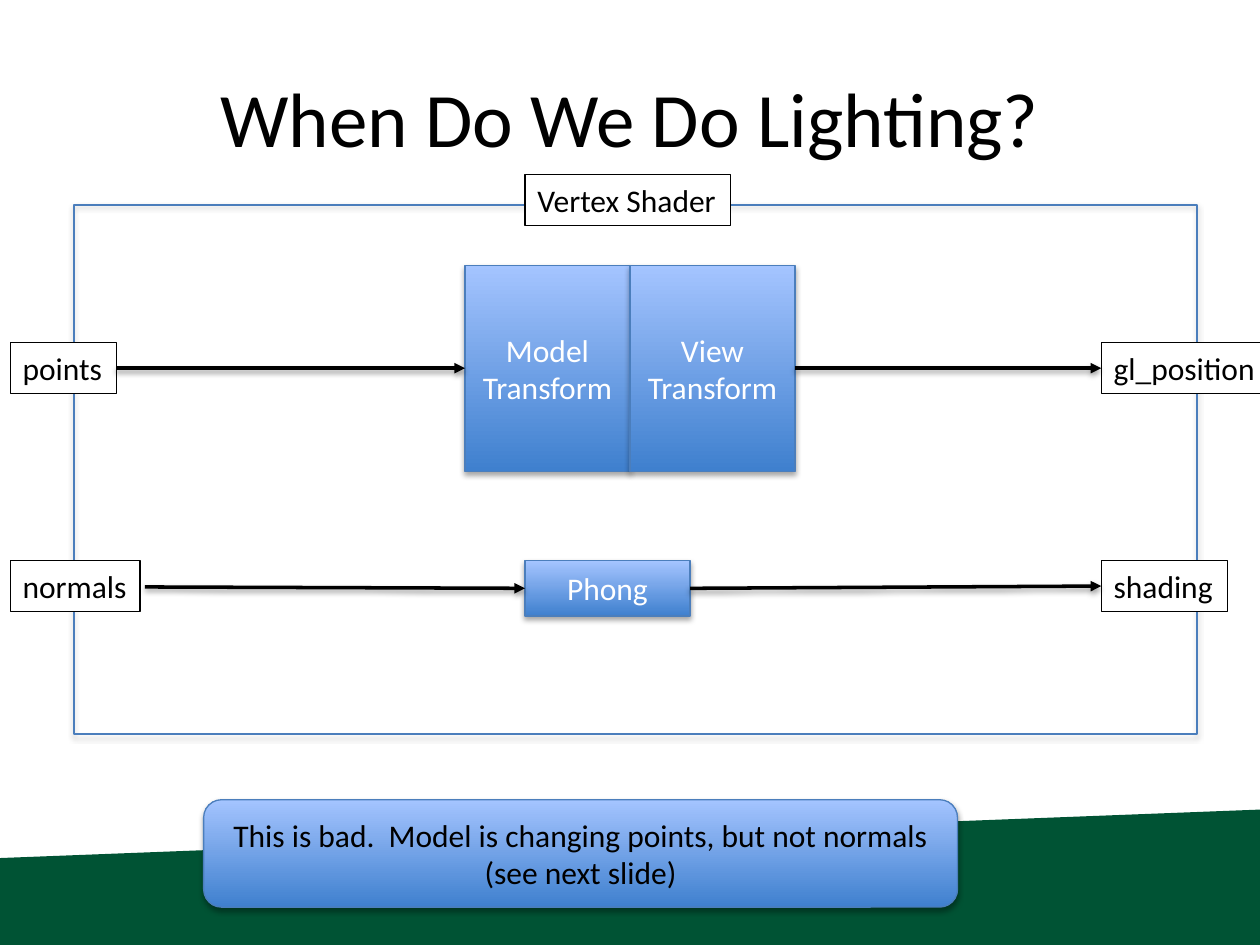
from lxml.etree import SubElement
from pptx import Presentation
from pptx.dml.color import RGBColor
from pptx.enum.shapes import MSO_CONNECTOR as Conn, MSO_SHAPE as Shape
from pptx.enum.text import MSO_ANCHOR as Anchor, MSO_AUTO_SIZE as Auto, PP_ALIGN as Align
from pptx.oxml.ns import qn
from pptx.util import Pt

BLACK, WHITE, BLUE, GREEN = "000000", "FFFFFF", "4B7EBC", "005334"
GRADIENT = ("3F80CE", "A4C4FF")


def rgb(color):
    return RGBColor.from_string(color)


def apply(target, values):
    for name, value in values.items():
        setattr(target, name, value)


class Diagram:
    font = {"name": "Calibri", "size": Pt(18)}
    centred = {"word_wrap": True, "vertical_anchor": Anchor.MIDDLE}
    fitted = {"word_wrap": False, "vertical_anchor": Anchor.TOP, "auto_size": Auto.SHAPE_TO_FIT_TEXT}

    def __init__(self, slide):
        self.s = slide

    def set_text(self, tf, text, frame, align, color, **font):
        apply(tf, frame)
        tf.text = text
        for p in tf.paragraphs:
            p.alignment = align
            apply(p.font, {**self.font, **font})
            p.font.color.rgb = rgb(color)

    def shadow(self, effects, alpha, distance):
        outer = SubElement(effects, qn("a:outerShdw"), blurRad=str(Pt(3.15)),
                           dist=str(Pt(distance)), dir="5400000", rotWithShape="0")
        color = SubElement(outer, qn("a:srgbClr"), val=BLACK)
        SubElement(color, qn("a:alpha"), val=str(alpha * 1000))

    def shape(self, kind, box, line, shadow=True):
        sp = self.s.shapes.add_shape(kind, *map(Pt, box))
        sp.shadow.inherit = False
        sp.line.color.rgb = rgb(line)
        sp.line.width = Pt(0.75)
        if shadow:
            self.shadow(sp._element.spPr.find(qn("a:effectLst")), 35, 1.81)
        return sp

    def title(self, text, box):
        sp = self.s.shapes.title
        apply(sp, dict(zip(("left", "top", "width", "height"), map(Pt, box))))
        self.set_text(sp.text_frame, text, self.centred, Align.CENTER, BLACK, size=Pt(44))

    def ground(self, points):
        start, *rest = [(Pt(x), Pt(y)) for x, y in points]
        builder = self.s.shapes.build_freeform(*start)
        builder.add_line_segments(rest, close=True)
        sp = builder.convert_to_shape()
        sp.shadow.inherit = False
        sp.fill.solid()
        sp.fill.fore_color.rgb = rgb(GREEN)
        sp.line.fill.background()

    def block(self, text, box, kind=Shape.RECTANGLE, color=WHITE):
        sp = self.shape(kind, box, BLUE)
        sp.fill.gradient()
        sp.fill.gradient_angle = 90
        for stop, shade in zip(sp.fill.gradient_stops, GRADIENT):
            stop.color.rgb = rgb(shade)
        self.set_text(sp.text_frame, text, self.centred, Align.CENTER, color)

    def frame(self, box):
        self.shape(Shape.RECTANGLE, box, BLUE).fill.background()

    def label(self, text, x, y, width):
        sp = self.shape(Shape.RECTANGLE, (x, y, width, 29.1), BLACK, shadow=False)
        sp.fill.solid()
        sp.fill.fore_color.rgb = rgb(WHITE)
        self.set_text(sp.text_frame, text, self.fitted, Align.LEFT, BLACK)

    def arrow(self, x1, y1, x2, y2):
        c = self.s.shapes.add_connector(Conn.STRAIGHT, *map(Pt, (x1, y1, x2, y2)))
        c.line.color.rgb = rgb(BLACK)
        c.line.width = Pt(2)
        spPr = c._element.spPr
        SubElement(spPr.find(qn("a:ln")), qn("a:tailEnd"), type="triangle")
        self.shadow(SubElement(spPr, qn("a:effectLst")), 38, 1.57)


def main():
    prs = Presentation()
    prs.slide_width, prs.slide_height = Pt(720), Pt(540)
    d = Diagram(prs.slides.add_slide(prs.slide_layouts[5]))

    left, right, middle, block_w = 5.8, 629.3, 360, 94.3
    points_y, normals_y, phong_x = 195.8, 320.4, 300

    d.ground([(0, 490.3), (720, 462.6), (720, 540), (0, 540)])
    d.title("When Do We Do Lighting?", (36, 21.6, 648, 90))

    d.block("Model\nTransform", (middle - block_w, 151.7, block_w, 117.7))
    d.block("View\nTransform", (middle, 151.7, block_w, 117.7))
    d.block("Phong", (phong_x, normals_y, block_w, 31.7))
    d.frame((42.2, 117.1, 641.8, 302.4))

    for label in [
        ("points", left, points_y, 60.8),
        ("normals", left, normals_y, 74.3),
        ("Vertex Shader", phong_x, 99.9, 117.5),
        ("shading", right, normals_y, 72),
        ("gl_position", right, points_y, 96.5),
    ]:
        d.label(*label)

    for arrow in [
        (66.4, 210.4, middle - block_w, 210.4),
        (middle + block_w, 210.4, right, 210.4),
        (phong_x + block_w, 336.2, right, 334.9),
        (82.8, 335.4, phong_x, 336.2),
    ]:
        d.arrow(*arrow)

    d.block("This is bad.  Model is changing points, but not normals (see next slide)",
            (116.4, 457, 430.8, 61.4), Shape.ROUNDED_RECTANGLE, BLACK)

    prs.save("out.pptx")


if __name__ == "__main__":
    main()
